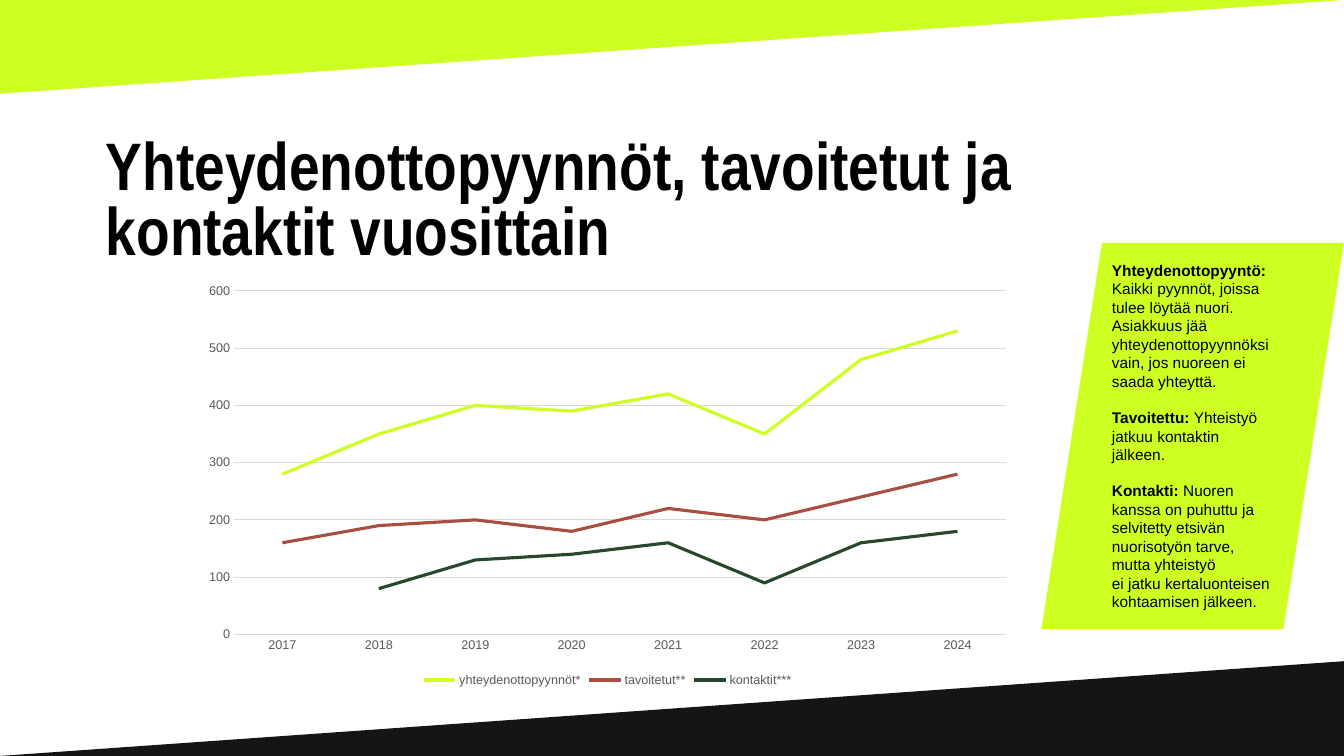
"""Build the slide on contact requests, young people reached and contacts by year."""

from dataclasses import dataclass

from pptx import Presentation
from pptx.chart.data import CategoryChartData as ChartData
from pptx.dml.color import RGBColor as Rgb
from pptx.enum.chart import XL_CHART_TYPE as Kind
from pptx.enum.chart import XL_LEGEND_POSITION as Place
from pptx.enum.chart import XL_TICK_MARK as Tick
from pptx.enum.shapes import MSO_SHAPE as Form
from pptx.enum.text import MSO_ANCHOR as Anchor
from pptx.enum.text import MSO_AUTO_SIZE as Fit
from pptx.enum.text import PP_ALIGN as Align
from pptx.slide import Slide
from pptx.text.text import Font
from pptx.util import Inches, Pt


@dataclass(frozen=True)
class Theme:
    """Colours, fonts and type sizes."""

    lime: str = "CEFF23"
    dark: str = "141515"
    rust: str = "A75042"
    green: str = "28482B"
    black: str = "000000"
    grey: str = "595959"
    grid: str = "D9D9D9"
    body: str = "Arial"
    head: str = "Arial Narrow"
    title: float = 48
    note: float = 11
    chart: float = 10
    label: float = 9
    line: float = 2.25
    hair: float = 0.75


@dataclass(frozen=True)
class Band:
    """A slanted band given by its corners."""

    points: tuple[tuple[float, float], ...]
    color: str


@dataclass(frozen=True)
class Series:
    """One line of the chart."""

    name: str
    values: tuple[int | None, ...]
    color: str


@dataclass(frozen=True)
class Note:
    """A term and what it means."""

    term: str
    text: str


THEME = Theme()
WIDE, HIGH, SLOPE = 13.33, 7.5, 0.94
BANDS = (
    Band(((0, 0), (0, SLOPE - 0.01), (WIDE, 0)), THEME.lime),
    Band(((0, HIGH), (WIDE, HIGH), (WIDE, HIGH - SLOPE)), THEME.dark),
)
TITLE = "Yhteydenottopyynnöt, tavoitetut ja kontaktit vuosittain"
YEARS = [str(year) for year in range(2017, 2025)]
LINES = (
    Series("yhteydenottopyynnöt*", (280, 350, 400, 390, 420, 350, 480, 530), THEME.lime),
    Series("tavoitetut**", (160, 190, 200, 180, 220, 200, 240, 280), THEME.rust),
    Series("kontaktit***", (None, 80, 130, 140, 160, 90, 160, 180), THEME.green),
)
NOTES = (
    Note(
        "Yhteydenottopyyntö:",
        " Kaikki pyynnöt, joissa tulee löytää nuori. Asiakkuus jää\n"
        "yhteydenottopyynnöksi vain, jos nuoreen ei saada yhteyttä.",
    ),
    Note("Tavoitettu:", " Yhteistyö jatkuu kontaktin jälkeen."),
    Note(
        "Kontakti:",
        " Nuoren kanssa on puhuttu ja selvitetty etsivän nuorisotyön tarve, "
        "mutta yhteistyö\nei jatku kertaluonteisen kohtaamisen jälkeen.",
    ),
)


def style(font: Font, size: float, color: str, face: str = THEME.body) -> None:
    """Set size, colour and face of a font."""
    font.size = Pt(size)
    font.name = face
    font.color.rgb = Rgb.from_string(color)


def paint(shape, color: str) -> None:
    """Give a shape a plain fill with no line or shadow."""
    shape.shadow.inherit = False
    shape.fill.solid()
    shape.fill.fore_color.rgb = Rgb.from_string(color)
    shape.line.fill.background()


def stroke(line, color: str, width: float) -> None:
    """Set colour and width of a line."""
    line.color.rgb = Rgb.from_string(color)
    line.width = Pt(width)


def draw_band(slide: Slide, band: Band) -> None:
    """Draw one slanted band."""
    start, *rest = [(Inches(x), Inches(y)) for x, y in band.points]
    pen = slide.shapes.build_freeform(*start)
    pen.add_line_segments(rest)
    paint(pen.convert_to_shape(), band.color)


def draw_title(slide: Slide) -> None:
    """Place and format the title."""
    title = slide.shapes.title
    title.left, title.top = Inches(1.05), Inches(1.38)
    title.width, title.height = Inches(11.24), Inches(1.16)
    frame = title.text_frame
    frame.text = TITLE
    frame.word_wrap = True
    frame.auto_size = Fit.NONE
    frame.vertical_anchor = Anchor.TOP
    frame.margin_left = frame.margin_right = 0
    frame.margin_top = frame.margin_bottom = 0
    line = frame.paragraphs[0]
    line.alignment = Align.LEFT
    line.line_spacing = 0.8
    style(line.font, THEME.title, THEME.black, THEME.head)
    line.font.bold = True


def draw_chart(slide: Slide) -> None:
    """Draw the yearly line chart."""
    data = ChartData()
    data.categories = YEARS
    for item in LINES:
        data.add_series(item.name, item.values)
    box = (Inches(1.91), Inches(2.73), Inches(8.23), Inches(4.13))
    chart = slide.shapes.add_chart(Kind.LINE, *box, data).chart
    style(chart.font, THEME.chart, THEME.black)
    chart.has_title = False
    chart.has_legend = True
    chart.legend.position = Place.BOTTOM
    chart.legend.include_in_layout = False
    style(chart.legend.font, THEME.label, THEME.grey)

    years, count = chart.category_axis, chart.value_axis
    for axis in (years, count):
        axis.major_tick_mark = axis.minor_tick_mark = Tick.NONE
        style(axis.tick_labels.font, THEME.label, THEME.grey)
    stroke(years.format.line, THEME.grid, THEME.hair)
    count.format.line.fill.background()
    count.minimum_scale, count.maximum_scale, count.major_unit = 0, 600, 100
    stroke(count.major_gridlines.format.line, THEME.grid, THEME.hair)

    plot = chart.plots[0]
    plot.vary_by_categories = False
    for item, line in zip(LINES, plot.series):
        line.smooth = False
        stroke(line.format.line, item.color, THEME.line)


def draw_notes(slide: Slide) -> None:
    """Draw the panel that explains the terms."""
    box = (Inches(10.33), Inches(2.41), Inches(3), Inches(3.83))
    panel = slide.shapes.add_shape(Form.FLOWCHART_DATA, *box)
    paint(panel, THEME.lime)
    frame = panel.text_frame
    frame.word_wrap = True
    frame.vertical_anchor = Anchor.MIDDLE
    for index, note in enumerate(NOTES):
        para = frame.add_paragraph() if index else frame.paragraphs[0]
        para.alignment = Align.LEFT
        para.space_before = Pt(12.65 if index else 0)
        style(para.font, THEME.note, THEME.black)
        term = para.add_run()
        term.text = note.term
        term.font.bold = True
        for row, text in enumerate(note.text.split("\n")):
            if row:
                para.add_line_break()
            para.add_run().text = text


def main() -> None:
    """Build and save the slide."""
    deck = Presentation()
    deck.slide_width, deck.slide_height = Inches(WIDE), Inches(HIGH)
    slide = deck.slides.add_slide(deck.slide_layouts.get_by_name("Title Only"))
    for band in BANDS:
        draw_band(slide, band)
    draw_title(slide)
    draw_chart(slide)
    draw_notes(slide)
    deck.save("out.pptx")


if __name__ == "__main__":
    main()
